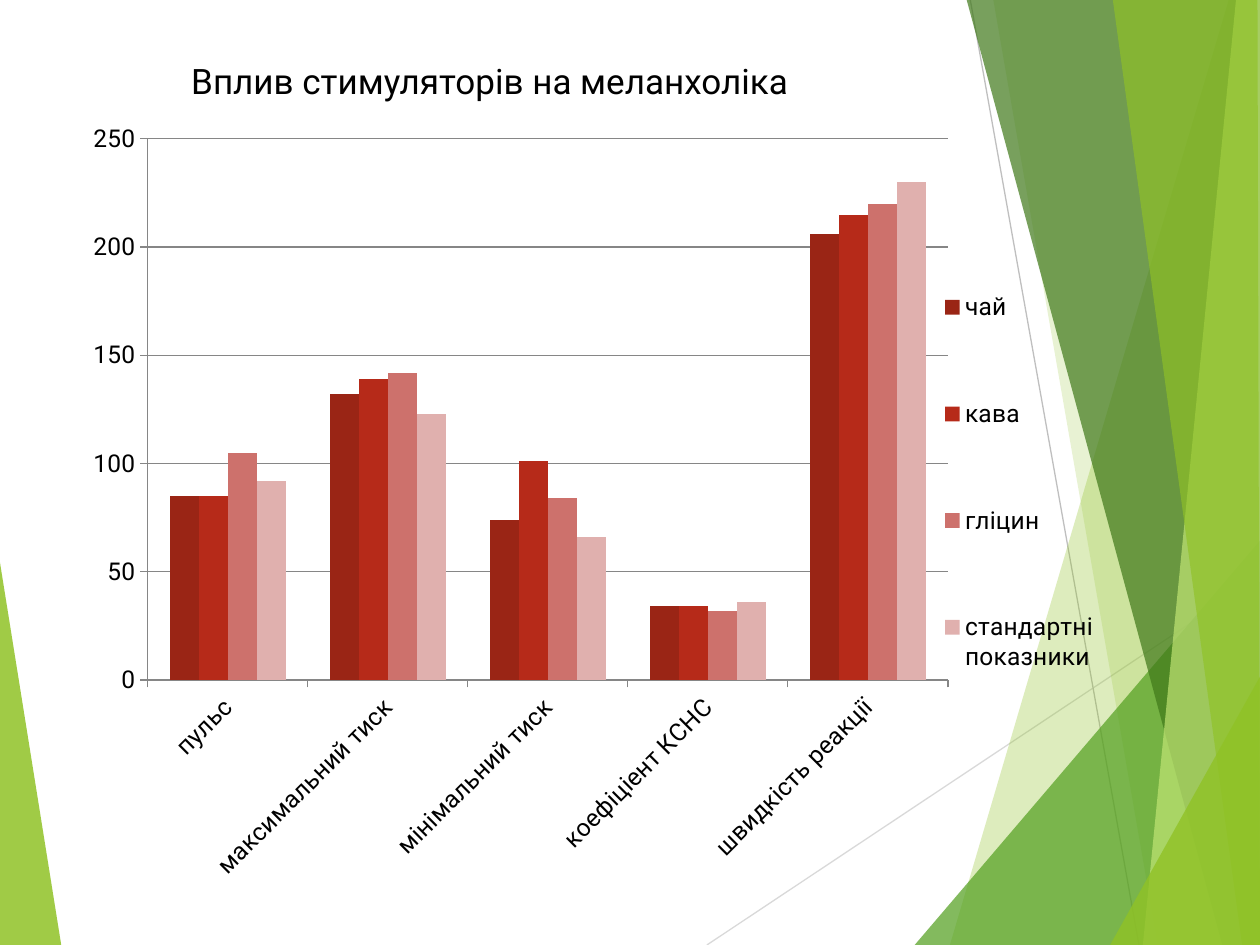
from lxml import etree
from pptx import Presentation
from pptx.chart.data import CategoryChartData
from pptx.dml.color import RGBColor
from pptx.enum.chart import XL_CHART_TYPE, XL_LEGEND_POSITION, XL_TICK_MARK
from pptx.enum.shapes import MSO_CONNECTOR
from pptx.enum.text import MSO_ANCHOR, MSO_AUTO_SIZE, PP_ALIGN
from pptx.oxml.ns import qn
from pptx.util import Cm, Pt

COLUMNS = XL_CHART_TYPE.COLUMN_CLUSTERED
LEGEND_RIGHT = XL_LEGEND_POSITION.RIGHT
TICK_OUTSIDE = XL_TICK_MARK.OUTSIDE
STRAIGHT = MSO_CONNECTOR.STRAIGHT
MIDDLE = MSO_ANCHOR.MIDDLE
NO_AUTOFIT = MSO_AUTO_SIZE.NONE
LEFT = PP_ALIGN.LEFT

BLACK = RGBColor(0x00, 0x00, 0x00)
AXIS_GREY = RGBColor(0x86, 0x86, 0x86)
LIGHT_GREY = RGBColor(0xD9, 0xD9, 0xD9)
GREY = RGBColor(0xBF, 0xBF, 0xBF)
LIME = RGBColor(0x90, 0xC2, 0x26)
GREEN = RGBColor(0x54, 0xA0, 0x21)
DARK_GREEN = RGBColor(0x3F, 0x78, 0x19)
PALE_GREEN = RGBColor(0xC0, 0xE4, 0x74)
DARK_RED = RGBColor(0x9A, 0x25, 0x15)
RED = RGBColor(0xB6, 0x2A, 0x19)
ROSE = RGBColor(0xCD, 0x71, 0x6C)
PALE_ROSE = RGBColor(0xE0, 0xB0, 0xAE)

TOP, BOTTOM, RIGHT = -0.03, 19.05, 25.43
CHART_BOX = (1.45, 2.18, 21.62, 15.88)
PLOT_BOX = (2.98, 2.8, 16.13, 10.91)
LEGEND_BOX = (18.6, 4.35, 3.89, 10.75)

FACETS_BEHIND_LINES = [
    (LIME, 85, [(-0.03, 11.15), (1.24, 19.08), (-0.03, BOTTOM)]),
]
LINES = [
    (LIGHT_GREY, (14.25, BOTTOM), (RIGHT, 11.61)),
    (GREY, (19.56, 0), (22.96, BOTTOM)),
]
FACETS = [
    (LIME, 30, [(24.77, 0), (19.15, BOTTOM), (RIGHT, BOTTOM), (RIGHT, 0)]),
    (LIME, 20, [(20.02, TOP), (23.34, BOTTOM), (RIGHT, BOTTOM), (RIGHT, TOP)]),
    (GREEN, 72, [(18.44, BOTTOM), (25.4, 10.9), (RIGHT, BOTTOM)]),
    (DARK_GREEN, 70, [(19.48, TOP), (24.64, BOTTOM), (RIGHT, BOTTOM), (RIGHT, TOP)]),
    (PALE_GREEN, 70, [(24.92, TOP), (23.04, BOTTOM), (RIGHT, BOTTOM), (25.4, TOP)]),
    (LIME, 65, [(22.43, TOP), (25.04, BOTTOM), (25.4, BOTTOM), (25.35, TOP)]),
    (LIME, 80, [(22.38, BOTTOM), (RIGHT, 13.59), (RIGHT, BOTTOM)]),
]
CATEGORIES = ["пульс", "максимальний тиск", "мінімальний тиск",
              "коефіціент КСНС", "швидкість реакції"]
SERIES = [
    ("чай", DARK_RED, (85, 132, 74, 34, 206)),
    ("кава", RED, (85, 139, 101, 34, 215)),
    ("гліцин", ROSE, (105, 142, 84, 32, 220)),
    ("стандартні показники", PALE_ROSE, (92, 123, 66, 36, 230)),
]


class SlideBuilder:
    font_name = "Roboto"

    def __init__(self, slide):
        self.slide = slide

    def style_font(self, font, size):
        font.name = self.font_name
        font.size = Pt(size)
        font.color.rgb = BLACK
        font.bold = False

    def title(self, text, left, top, width, height):
        shape = self.slide.shapes.title
        shape.left, shape.top = Cm(left), Cm(top)
        shape.width, shape.height = Cm(width), Cm(height)
        frame = shape.text_frame
        frame.word_wrap = True
        frame.auto_size = NO_AUTOFIT
        frame.vertical_anchor = MIDDLE
        paragraph = frame.paragraphs[0]
        paragraph.alignment = LEFT
        run = paragraph.add_run()
        run.text = text
        self.style_font(run.font, 20)

    def facet(self, color, opacity, points):
        corners = [(Cm(x), Cm(y)) for x, y in points]
        builder = self.slide.shapes.build_freeform(*corners[0])
        builder.add_line_segments(corners[1:], close=True)
        shape = builder.convert_to_shape()
        shape.shadow.inherit = False
        shape.line.fill.background()
        shape.fill.solid()
        shape.fill.fore_color.rgb = color
        color_element = shape.element.spPr.find(qn("a:solidFill"))[0]
        etree.SubElement(color_element, qn("a:alpha")).set("val", str(opacity * 1000))

    def line(self, color, start, end):
        connector = self.slide.shapes.add_connector(
            STRAIGHT, *(Cm(value) for value in start + end))
        connector.line.color.rgb = color
        connector.line.width = Pt(0.75)
        etree.SubElement(connector.element.spPr, qn("a:effectLst"))

    def place(self, parent, position, box, chart_box, inner=False):
        for old in parent.findall(qn("c:layout")):
            parent.remove(old)
        layout = etree.Element(qn("c:layout"))
        parent.insert(position, layout)
        manual = etree.SubElement(layout, qn("c:manualLayout"))
        left, top, width, height = box
        chart_left, chart_top, chart_width, chart_height = chart_box
        settings = [("layoutTarget", "inner")] if inner else []
        settings += [("xMode", "edge"), ("yMode", "edge"),
                     ("x", (left - chart_left) / chart_width),
                     ("y", (top - chart_top) / chart_height),
                     ("w", width / chart_width), ("h", height / chart_height)]
        for name, value in settings:
            etree.SubElement(manual, qn(f"c:{name}")).set("val", str(value))

    def column_chart(self, categories, series, chart_box, plot_box, legend_box):
        data = CategoryChartData()
        data.categories = categories
        for name, _, values in series:
            data.add_series(name, values)
        chart = self.slide.shapes.add_chart(
            COLUMNS, *(Cm(value) for value in chart_box), data).chart
        self.style_font(chart.font, 14)
        chart.has_title = False
        plot = chart.plots[0]
        plot.vary_by_categories = False
        plot.gap_width = 150
        plot.overlap = 0
        for plotted, (_, color, _) in zip(plot.series, series):
            plotted.format.fill.solid()
            plotted.format.fill.fore_color.rgb = color
        value_axis, category_axis = chart.value_axis, chart.category_axis
        value_axis.minimum_scale = 0
        value_axis.maximum_scale = 250
        value_axis.major_unit = 50
        value_axis.has_major_gridlines = True
        gridlines = value_axis.major_gridlines
        for part in (value_axis, category_axis, gridlines):
            part.format.line.color.rgb = AXIS_GREY
            part.format.line.width = Pt(0.75)
        for axis in (value_axis, category_axis):
            axis.major_tick_mark = TICK_OUTSIDE
            self.style_font(axis.tick_labels.font, 14)
        category_axis._element.find(qn("c:txPr")).find(qn("a:bodyPr")).set("rot", "-2700000")
        chart.has_legend = True
        legend = chart.legend
        legend.position = LEGEND_RIGHT
        legend.include_in_layout = False
        self.style_font(legend.font, 14)
        plot_area = chart._chartSpace.chart.plotArea
        self.place(plot_area, 0, plot_box, chart_box, inner=True)
        self.place(legend._element, 1, legend_box, chart_box)


def main():
    presentation = Presentation()
    presentation.slide_width = Cm(25.4)
    presentation.slide_height = Cm(19.05)
    slide = presentation.slides.add_slide(presentation.slide_layouts[5])
    builder = SlideBuilder(slide)
    for facet in FACETS_BEHIND_LINES:
        builder.facet(*facet)
    for line in LINES:
        builder.line(*line)
    for facet in FACETS:
        builder.facet(*facet)
    builder.title("Вплив стимуляторів на меланхоліка", 3.6, 1.07, 14.33, 1.12)
    builder.column_chart(CATEGORIES, SERIES, CHART_BOX, PLOT_BOX, LEGEND_BOX)
    presentation.save("out.pptx")


if __name__ == "__main__":
    main()
